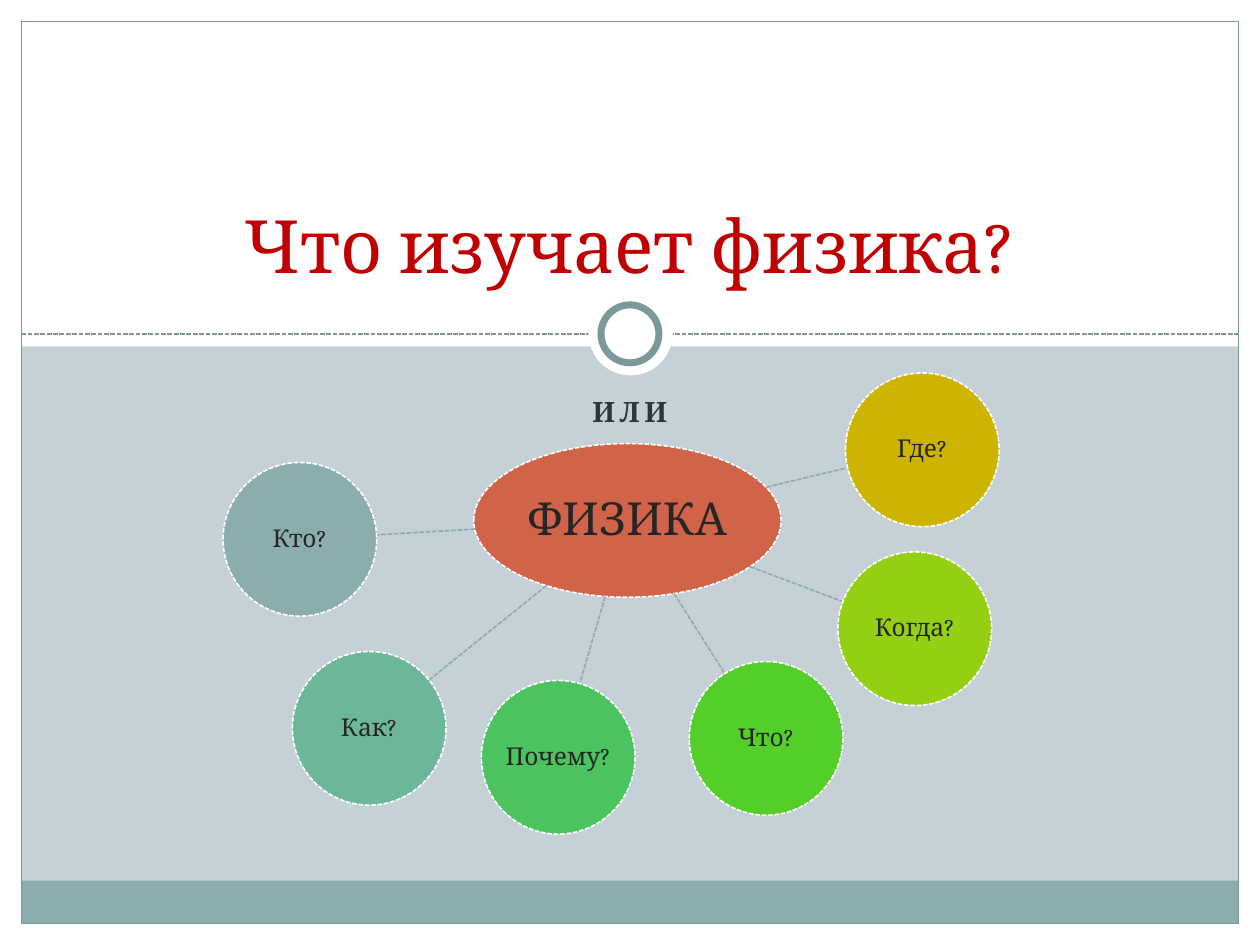
"""Build the slide that asks what physics studies."""
from dataclasses import dataclass
from math import hypot

from pptx import Presentation
from pptx import util as u
from pptx.dml.color import RGBColor
from pptx.enum import dml, shapes, text
from pptx.oxml.ns import qn
from pptx.shapes.autoshape import Shape
from pptx.slide import Slide
from pptx.text.text import TextFrame

WIDE, HIGH = u.Inches(10), u.Inches(7.5)
COLS, ROWS = 100, 75
FONT = "Cambria"
WHITE, TEAL, GREY, INK = "FFFFFF", "8CADAE", "7C999A", "262626"
RECT, OVAL = shapes.MSO_SHAPE.RECTANGLE, shapes.MSO_SHAPE.OVAL
EDGE = 1.7


@dataclass(frozen=True)
class Box:
    """Area in grid columns and rows."""
    col: float
    row: float
    wide: float
    high: float


@dataclass(frozen=True)
class Pen:
    """Outline colour, width in points and dash."""
    hue: str
    size: float
    dash: bool = False


@dataclass(frozen=True)
class Style:
    """Look of one run of text."""
    size: float
    hue: str
    bold: bool = False
    gap: int = 0


@dataclass(frozen=True)
class Node:
    """Ellipse of the mind map, placed by its centre and radii."""
    word: str
    col: float
    row: float
    hue: str
    wide: float = 6.1
    high: float = 6.1
    size: float = 14
    inset: float = 0.01

    def rim(self, other: "Node") -> tuple[float, float]:
        """Return the point of the outline that faces another node."""
        dx, dy = other.col - self.col, other.row - self.row
        part = 1 / hypot(dx / self.wide, dy / self.high)
        return self.col + dx * part, self.row + dy * part


HUB = Node("ФИЗИКА", 49.8, 41.3, "D16349", 12.2, 6.1, 26, 0.02)
NODES = [
    Node("Где?", 73.2, 35.7, "CCB400"),
    Node("Когда?", 72.6, 49.9, "95CF13"),
    Node("Что?", 60.8, 58.6, "54CF29"),
    Node("Почему?", 44.3, 60.1, "4BC35F"),
    Node("Как?", 29.3, 57.8, "6DB799"),
    Node("Кто?", 23.8, 42.8, TEAL),
]
BANDS = [
    (Box(0, ROWS - EDGE, COLS, EDGE), WHITE),
    (Box(COLS - EDGE, 0, EDGE, ROWS), WHITE),
    (Box(0, 0, EDGE, ROWS), WHITE),
    (Box(0, 0, COLS, 27.5), WHITE),
    (Box(EDGE, 69.9, COLS - 2 * EDGE, 3.4), TEAL),
]


def tint(hue: str) -> RGBColor:
    """Turn a hex string into a colour."""
    return RGBColor.from_string(hue)


def across(col: float) -> int:
    """Turn columns into a length."""
    return round(WIDE * col / COLS)


def down(row: float) -> int:
    """Turn rows into a length."""
    return round(HIGH * row / ROWS)


def place(box: Box) -> tuple[int, int, int, int]:
    """Turn a box into left, top, width and height."""
    return across(box.col), down(box.row), across(box.wide), down(box.high)


def trace(line, pen: Pen) -> None:
    """Apply a pen to a line."""
    line.color.rgb = tint(pen.hue)
    line.width = u.Pt(pen.size)
    if pen.dash:
        line.dash_style = dml.MSO_LINE.SQUARE_DOT


def draw(slide: Slide, kind, box: Box, hue: str | None, pen: Pen | None = None) -> Shape:
    """Add a preset shape."""
    shape = slide.shapes.add_shape(kind, *place(box))
    shape.shadow.inherit = False
    if hue:
        shape.fill.solid()
        shape.fill.fore_color.rgb = tint(hue)
    else:
        shape.fill.background()
    if pen:
        trace(shape.line, pen)
    else:
        shape.line.fill.background()
    return shape


def link(slide: Slide, head: tuple[float, float], tail: tuple[float, float], hue: str) -> None:
    """Add a dashed line between two grid points."""
    line = slide.shapes.add_connector(
        shapes.MSO_CONNECTOR.STRAIGHT,
        across(head[0]), down(head[1]), across(tail[0]), down(tail[1]))
    trace(line.line, Pen(hue, 0.9, True))
    props = line._element.spPr
    props.append(props.makeelement(qn("a:effectLst"), {}))


def write(frame: TextFrame, words: str, style: Style, anchor):
    """Add one centred run and return its paragraph."""
    frame.word_wrap = True
    frame.vertical_anchor = anchor
    para = frame.paragraphs[0]
    para.alignment = text.PP_ALIGN.CENTER
    run = para.add_run()
    run.text = words
    run.font.name = FONT
    run.font.size = u.Pt(style.size)
    run.font.bold = style.bold
    run.font.color.rgb = tint(style.hue)
    if style.gap:
        run._r.get_or_add_rPr().set("spc", str(style.gap))
    return para


def label(slide: Slide, box: Box, words: str, style: Style, anchor) -> None:
    """Add a text box."""
    write(slide.shapes.add_textbox(*place(box)).text_frame, words, style, anchor)


def bubble(slide: Slide, node: Node) -> None:
    """Add a node with its word."""
    box = Box(node.col - node.wide, node.row - node.high, 2 * node.wide, 2 * node.high)
    frame = draw(slide, OVAL, box, node.hue, Pen(WHITE, 0.9, True)).text_frame
    pad = u.Inches(node.inset)
    frame.margin_left = frame.margin_right = frame.margin_top = frame.margin_bottom = pad
    para = write(frame, node.word, Style(node.size, INK), text.MSO_ANCHOR.MIDDLE)
    para.line_spacing = 0.9


def main() -> None:
    """Build and save the slide."""
    deck = Presentation()
    deck.slide_width, deck.slide_height = WIDE, HIGH
    slide = deck.slides.add_slide(deck.slide_layouts[6])
    slide.background.fill.solid()
    slide.background.fill.fore_color.rgb = tint("C5D1D7")

    for box, hue in BANDS:
        draw(slide, RECT, box, hue)
    link(slide, (EDGE, 26.5), (COLS - EDGE, 26.5), GREY)
    draw(slide, RECT, Box(EDGE, EDGE, COLS - 2 * EDGE, ROWS - 2 * EDGE), None, Pen(GREY, 0.75))
    draw(slide, OVAL, Box(46.7, 23.1, 6.7, 6.7), WHITE)
    draw(slide, OVAL, Box(47.7, 24.2, 4.6, 4.6), WHITE, Pen(GREY, 4))

    label(slide, Box(15, 30.8, 70, 7.5), "ИЛИ",
          Style(16, "2A373D", True, 250), text.MSO_ANCHOR.TOP)
    label(slide, Box(7.5, 4.2, 85, 19.2), "Что изучает физика?",
          Style(42, "C00000"), text.MSO_ANCHOR.BOTTOM)

    bubble(slide, HUB)
    for node in NODES:
        link(slide, HUB.rim(node), node.rim(HUB), TEAL)
        bubble(slide, node)
    deck.save("out.pptx")


if __name__ == "__main__":
    main()
